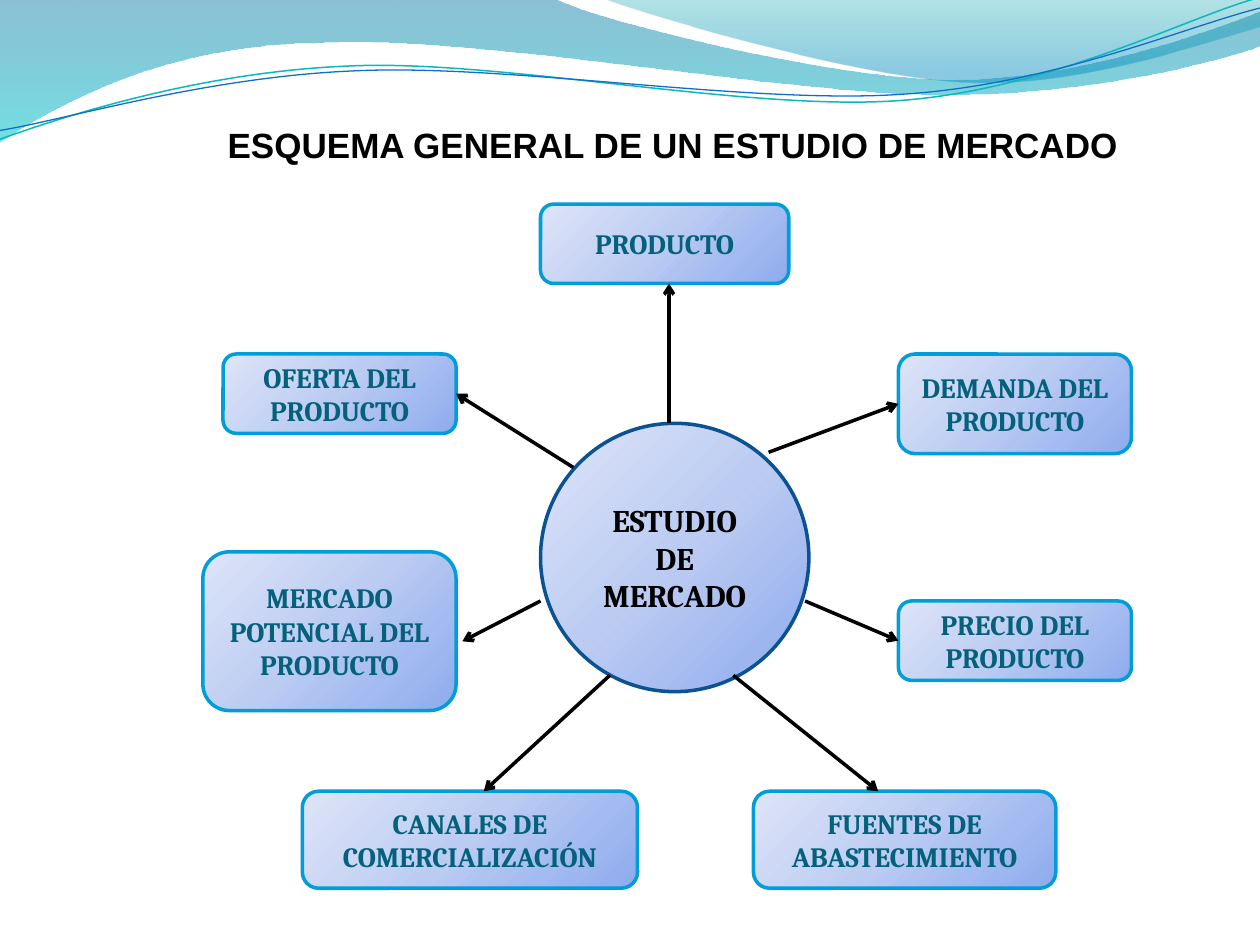
from dataclasses import dataclass
from itertools import chain, islice
from typing import NamedTuple

from lxml.etree import SubElement
from pptx import Presentation
from pptx.dml.color import RGBColor
from pptx.enum.shapes import MSO_CONNECTOR as Connector, MSO_SHAPE as Preset
from pptx.enum.text import MSO_ANCHOR as Anchor, PP_ALIGN as Align
from pptx.oxml.ns import qn
from pptx.util import Inches, Pt

COLUMNS = 10
LEFT, RIGHT = 1, 3

Point = tuple[float, float]


class Stop(NamedTuple):
    position: int
    color: str
    opacity: int = 100


@dataclass
class Wave:
    """An outline: each segment is one corner, or two handles and an end."""
    start: Point
    segments: list[tuple[Point, ...]]
    stops: tuple[Stop, ...] = ()
    line: str = ""
    weight: float = 0
    rotation: float = 0


@dataclass
class Topic:
    """A box of the scheme with the arrow that leads to it."""
    label: str
    box: tuple[float, float, float, float]
    arrow_from: Point
    arrow_to: Point
    joined_side: int | None = None


HUB_STOPS = (Stop(0, "8EABEE"), Stop(50, "BBCBF2"), Stop(100, "DEE5F8"))
TOPIC_STOPS = (Stop(0, "8EABEE"), Stop(25, "A3BBF0"), Stop(38, "AFC3F1"),
               Stop(44, "B5C7F2"), Stop(50, "BBCBF2"), Stop(100, "DEE5F8"))

WAVES = [
    Wave((0, -0.01), [
        ((4.4, -0.01),),
        ((4.76, 0.17), (6.64, 0.63), (7.58, 0.63)),
        ((8.53, 0.63), (9.58, 0.26), (10, 0.09)),
        ((10.01, 0.36),),
        ((9.83, 0.44), (8.7, 0.76), (7.46, 0.75)),
        ((6.22, 0.75), (3.82, 0.28), (2.57, 0.34)),
        ((1.29, 0.35), (0.46, 0.83), (-0.01, 1.13)),
    ], stops=(Stop(0, "0074A1", 45), Stop(100, "00C6CF", 55))),
    Wave((4.79, -0.01), [
        ((5.09, 0.11), (6.82, 0.62), (7.69, 0.65)),
        ((8.56, 0.69), (9.61, 0.32), (10, 0.21)),
        ((10, 0),),
    ], stops=(Stop(0, "00A1A9", 30), Stop(80, "008BBF", 45))),
    Wave((-0.02, 0.87), [
        ((0.47, 0.72), (1.58, 0.41), (2.78, 0.42)),
        ((3.96, 0.42), (5.91, 0.93), (7.12, 0.9)),
        ((8.32, 0.87), (9.4, 0.36), (10, 0.22)),
    ], line="0AB8BF", weight=0.85, rotation=357.3),
    Wave((-0.02, 0.8), [
        ((0.46, 0.75), (1.64, 0.45), (2.83, 0.46)),
        ((4.03, 0.46), (5.96, 0.88), (7.16, 0.85)),
        ((8.35, 0.83), (9.42, 0.42), (10.02, 0.3)),
    ], line="0F6FC6", weight=0.75, rotation=357.3),
]

TOPICS = [
    Topic("DEMANDA DEL PRODUCTO", (7.13, 2.81, 1.85, 0.79), (6.1, 3.59), (7.13, 3.2), LEFT),
    Topic("PRODUCTO", (4.29, 1.62, 1.97, 0.63), (5.31, 3.36), (5.31, 2.25)),
    Topic("OFERTA DEL PRODUCTO", (1.77, 2.81, 1.85, 0.63), (4.55, 3.71), (3.62, 3.12), RIGHT),
    Topic("MERCADO POTENCIAL DEL PRODUCTO", (1.61, 4.38, 2.01, 1.26), (4.29, 4.77), (3.67, 5.09)),
    Topic("CANALES DE COMERCIALIZACIÓN", (2.4, 6.28, 2.66, 0.77), (4.84, 5.36), (3.84, 6.28)),
    Topic("FUENTES DE ABASTECIMIENTO", (5.98, 6.28, 2.4, 0.77), (5.82, 5.36), (6.97, 6.28)),
    Topic("PRECIO DEL PRODUCTO", (7.13, 4.77, 1.85, 0.63), (6.39, 4.77), (7.13, 5.09), LEFT),
]

deck = Presentation()
deck.slide_width, deck.slide_height = Inches(10), Inches(7.5)
CELL = deck.slide_width // COLUMNS


def grid(*cells: float) -> list[int]:
    """Turn counts of square grid cells into slide lengths."""
    return [round(count * CELL) for count in cells]


def rgb(color: str) -> RGBColor:
    return RGBColor.from_string(color)


def fill_gradient(shape, stops: tuple[Stop, ...], angle: int) -> None:
    """Fill along an angle in clockwise degrees, with opacity per stop."""
    shape.fill.background()
    placeholder = shape._element.spPr.find(qn("a:noFill"))
    gradient = placeholder.makeelement(qn("a:gradFill"), {"rotWithShape": "1"})
    stop_list = SubElement(gradient, qn("a:gsLst"))
    for stop in stops:
        entry = SubElement(stop_list, qn("a:gs"), pos=str(stop.position * 1000))
        color = SubElement(entry, qn("a:srgbClr"), val=stop.color)
        if stop.opacity < 100:
            SubElement(color, qn("a:alpha"), val=str(stop.opacity * 1000))
    SubElement(gradient, qn("a:lin"), ang=str(angle * 60000), scaled="0")
    placeholder.getparent().replace(placeholder, gradient)


def set_line(shape, color: str, weight: float) -> None:
    shape.line.color.rgb = rgb(color)
    shape.line.width = Pt(weight)


def add_label(paragraph, label: str, font: str, size: int, color: str) -> None:
    paragraph.alignment = Align.CENTER
    run = paragraph.add_run()
    run.text = label
    run.font.name, run.font.size, run.font.bold = font, Pt(size), True
    run.font.color.rgb = rgb(color)


def bend_segments(shape, segments: list[tuple[Point, ...]]) -> None:
    """Join the three straight steps of each curved segment into one curve."""
    steps = iter(shape._element.xpath(".//a:lnTo"))
    for segment in segments:
        first, *others = islice(steps, len(segment))
        if others:
            curve = first.makeelement(qn("a:cubicBezTo"))
            first.addprevious(curve)
            for step in (first, *others):
                curve.append(step[0])
                step.getparent().remove(step)


def draw_wave(slide, wave: Wave) -> None:
    builder = slide.shapes.build_freeform(*grid(*wave.start))
    corners = [tuple(grid(*point)) for point in chain(*wave.segments)]
    builder.add_line_segments(corners, close=bool(wave.stops))
    shape = builder.convert_to_shape()
    bend_segments(shape, wave.segments)
    shape.rotation = wave.rotation
    shape.shadow.inherit = False
    if wave.stops:
        fill_gradient(shape, wave.stops, 90)
        shape.line.fill.background()
    else:
        shape.fill.background()
        set_line(shape, wave.line, wave.weight)


def draw_node(slide, preset, box, label: str, size: int, color: str,
              border: str, stops: tuple[Stop, ...]):
    node = slide.shapes.add_shape(preset, *grid(*box))
    node.shadow.inherit = False
    fill_gradient(node, stops, 225)
    set_line(node, border, 2)
    node.text_frame.word_wrap = True
    node.text_frame.vertical_anchor = Anchor.MIDDLE
    add_label(node.text_frame.paragraphs[0], label, "Cambria", size, color)
    return node


def draw_arrow(slide, topic: Topic, node) -> None:
    arrow = slide.shapes.add_connector(
        Connector.STRAIGHT, *grid(*topic.arrow_from, *topic.arrow_to))
    if topic.joined_side is not None:
        arrow.end_connect(node, topic.joined_side)
    set_line(arrow, "000000", 2)
    SubElement(arrow.line._get_or_add_ln(), qn("a:tailEnd"), type="arrow")
    SubElement(arrow._element.spPr, qn("a:effectLst"))


def draw_title(slide, title: str) -> None:
    heading = slide.shapes.add_textbox(*grid(0.34, 0.93, 9, 0.78))
    heading.text_frame.word_wrap = True
    paragraph = heading.text_frame.paragraphs[0]
    add_label(paragraph, title, "Arial", 20, "000000")
    paragraph._p.get_or_add_pPr().set("marL", str(CELL))


def main() -> None:
    slide = deck.slides.add_slide(deck.slide_layouts[6])
    for wave in WAVES:
        draw_wave(slide, wave)
    draw_node(slide, Preset.OVAL, (4.29, 3.36, 2.13, 2.13),
              "ESTUDIO DE MERCADO", 18, "000000", "0B5292", HUB_STOPS)
    nodes = [draw_node(slide, Preset.ROUNDED_RECTANGLE, topic.box, topic.label,
                       16, "04617B", "009DD9", TOPIC_STOPS) for topic in TOPICS]
    for topic, node in zip(TOPICS, nodes):
        draw_arrow(slide, topic, node)
    draw_title(slide, "ESQUEMA GENERAL DE UN ESTUDIO DE MERCADO")
    deck.save("out.pptx")


if __name__ == "__main__":
    main()
